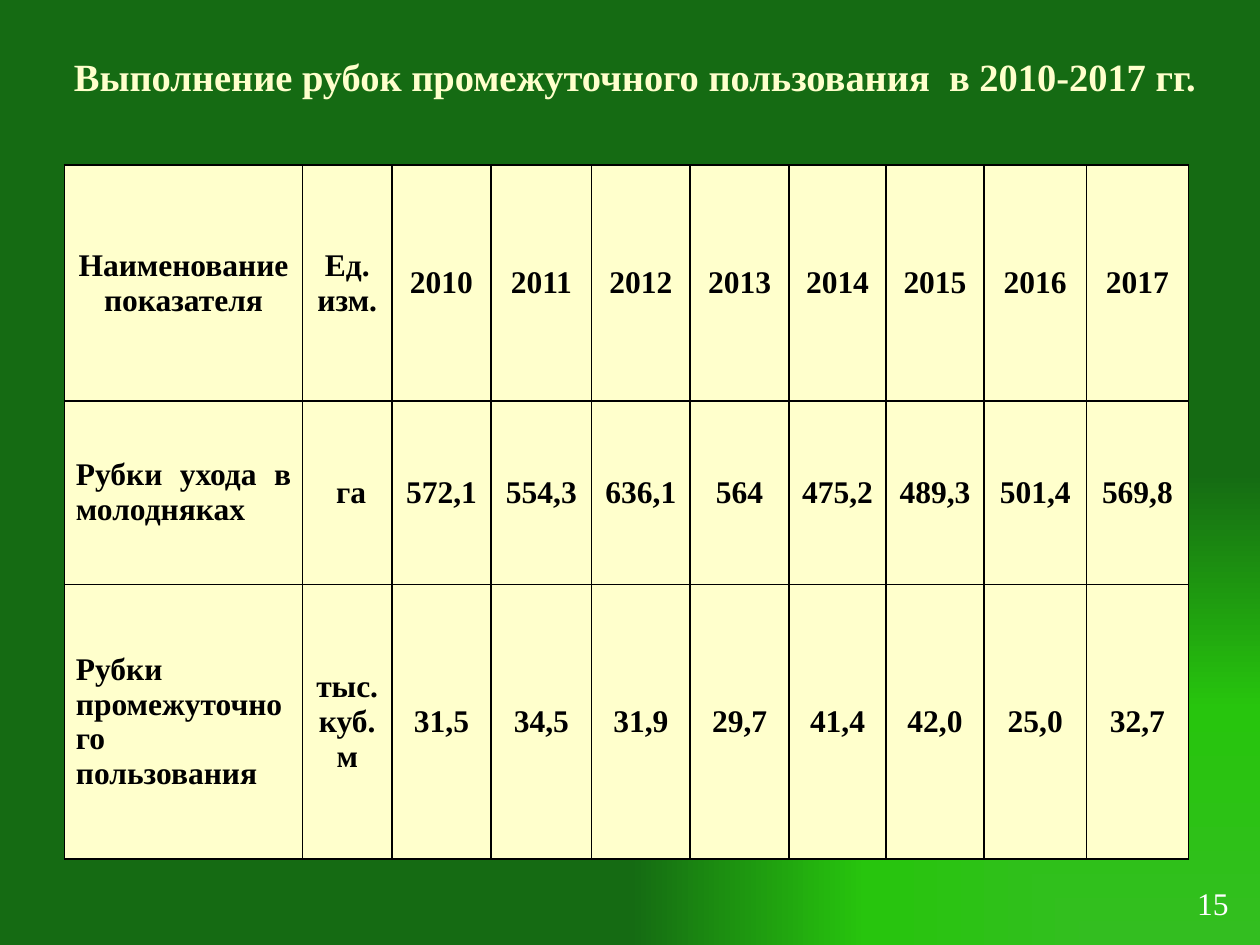
from lxml import etree
from pptx import Presentation
from pptx.dml.color import RGBColor
from pptx.enum.text import MSO_ANCHOR, PP_ALIGN
from pptx.oxml import parse_xml
from pptx.oxml.ns import qn
from pptx.util import Cm, Pt

CENTER, JUSTIFY, RIGHT = PP_ALIGN.CENTER, PP_ALIGN.JUSTIFY, PP_ALIGN.RIGHT
MIDDLE = MSO_ANCHOR.MIDDLE

CREAM = RGBColor(0xFF, 0xFF, 0xCC)
BLACK = RGBColor(0, 0, 0)
WHITE = RGBColor(0xFF, 0xFF, 0xFF)
GRADIENT = [
    (0, RGBColor(0x33, 0xBE, 0x20)),
    (50, RGBColor(0x27, 0xC5, 0x0D)),
    (100, RGBColor(0x15, 0x6B, 0x13)),
]
FONT = "Times New Roman"

ROWS = [
    ["Наименование показателя", "Ед. изм."] + [str(year) for year in range(2010, 2018)],
    ["Рубки ухода в молодняках", " га",
     "572,1", "554,3", "636,1", "564", "475,2", "489,3", "501,4", "569,8"],
    ["Рубки промежуточного пользования", "тыс. куб.м",
     "31,5", "34,5", "31,9", "29,7", "41,4", "42,0", "25,0", "32,7"],
]
COL_WIDTHS = [4.8, 1.8, 2, 2.03, 1.98, 2, 1.95, 1.98, 2.06, 2.06]
ROW_HEIGHTS = [4.75, 3.7, 5.54]


def set_background(s):
    """Fill the slide with a gradient spreading from the bottom right corner."""
    stops = "".join(
        f'<a:gs pos="{pos * 1000}"><a:srgbClr val="{color}"/></a:gs>'
        for pos, color in GRADIENT
    )
    s.background.fill.gradient()
    grad = s._element.cSld.find(".//" + qn("a:gradFill"))
    grad.getparent().replace(grad, parse_xml(
        '<a:gradFill xmlns:a="http://schemas.openxmlformats.org/drawingml/2006/main" '
        f'rotWithShape="1"><a:gsLst>{stops}</a:gsLst>'
        '<a:path path="rect"><a:fillToRect l="100000" t="100000"/></a:path></a:gradFill>'
    ))


def write(tf, text, size, color, align, bold=False):
    tf.text = text
    tf.word_wrap = True
    p = tf.paragraphs[0]
    p.alignment = align
    font = p.runs[0].font
    font.name, font.size, font.bold = FONT, Pt(size), bold
    font.color.rgb = color


def add_title(s, text):
    title = s.shapes.title
    title.left, title.top, title.width, title.height = Cm(0), Cm(0), Cm(25.4), Cm(3.05)
    write(title.text_frame, text, 22, CREAM, CENTER, bold=True)
    title.text_frame.vertical_anchor = MIDDLE


def set_borders(cell):
    tc_pr = cell._tc.get_or_add_tcPr()
    for i, side in enumerate(("lnL", "lnR", "lnT", "lnB")):
        ln = etree.Element(qn(f"a:{side}"), w=str(Pt(1)))
        fill = etree.SubElement(ln, qn("a:solidFill"))
        etree.SubElement(fill, qn("a:srgbClr"), val=str(BLACK))
        tc_pr.insert(i, ln)


def format_cell(cell, text, align, side_margin):
    write(cell.text_frame, text, 18, BLACK, align, bold=True)
    cell.vertical_anchor = MIDDLE
    cell.margin_left = cell.margin_right = side_margin
    cell.margin_top = cell.margin_bottom = Cm(0.13)
    cell.fill.solid()
    cell.fill.fore_color.rgb = CREAM
    set_borders(cell)


def add_felling_table(s):
    table = s.shapes.add_table(
        len(ROWS), len(COL_WIDTHS), Cm(1.3), Cm(3.33),
        Cm(sum(COL_WIDTHS)), Cm(sum(ROW_HEIGHTS)),
    ).table
    for column, width in zip(table.columns, COL_WIDTHS):
        column.width = Cm(width)
    for row, height in zip(table.rows, ROW_HEIGHTS):
        row.height = Cm(height)
    for i, values in enumerate(ROWS):
        for j, text in enumerate(values):
            align = JUSTIFY if i > 0 and j == 0 else CENTER
            narrow = i == len(ROWS) - 1 and j > 1
            format_cell(table.cell(i, j), text, align, Cm(0.1 if narrow else 0.23))


def add_page_number(s, text):
    sp = s.shapes.add_textbox(Cm(23.5), Cm(17.7), Cm(1.52), Cm(1.27))
    write(sp.text_frame, text, 18, WHITE, RIGHT)


def main():
    prs = Presentation()
    prs.slide_width, prs.slide_height = Cm(25.4), Cm(19.05)
    s = prs.slides.add_slide(prs.slide_layouts[5])
    set_background(s)
    add_title(s, " Выполнение рубок промежуточного пользования  в 2010-2017 гг.")
    add_felling_table(s)
    add_page_number(s, "15")
    prs.save("out.pptx")


if __name__ == "__main__":
    main()
